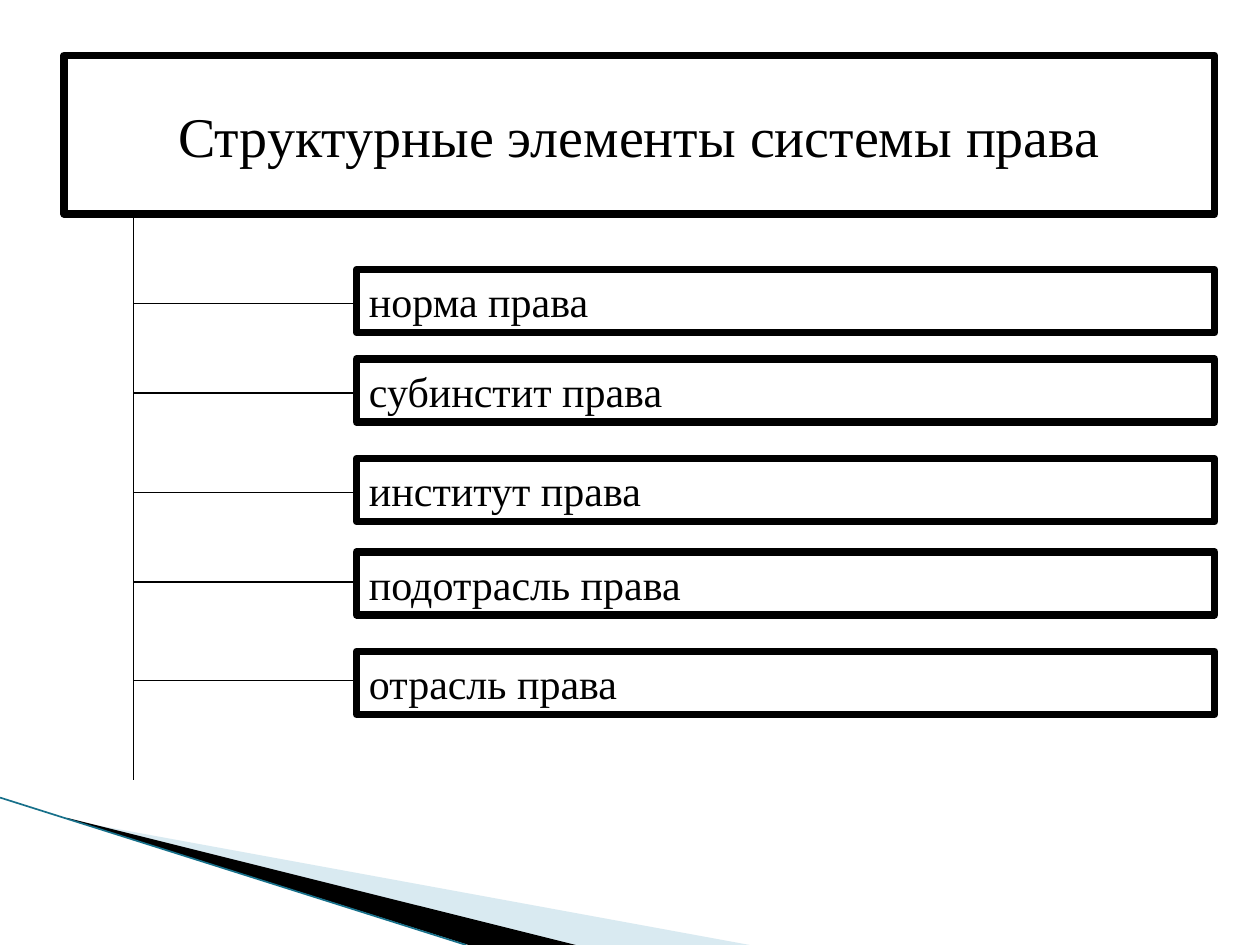
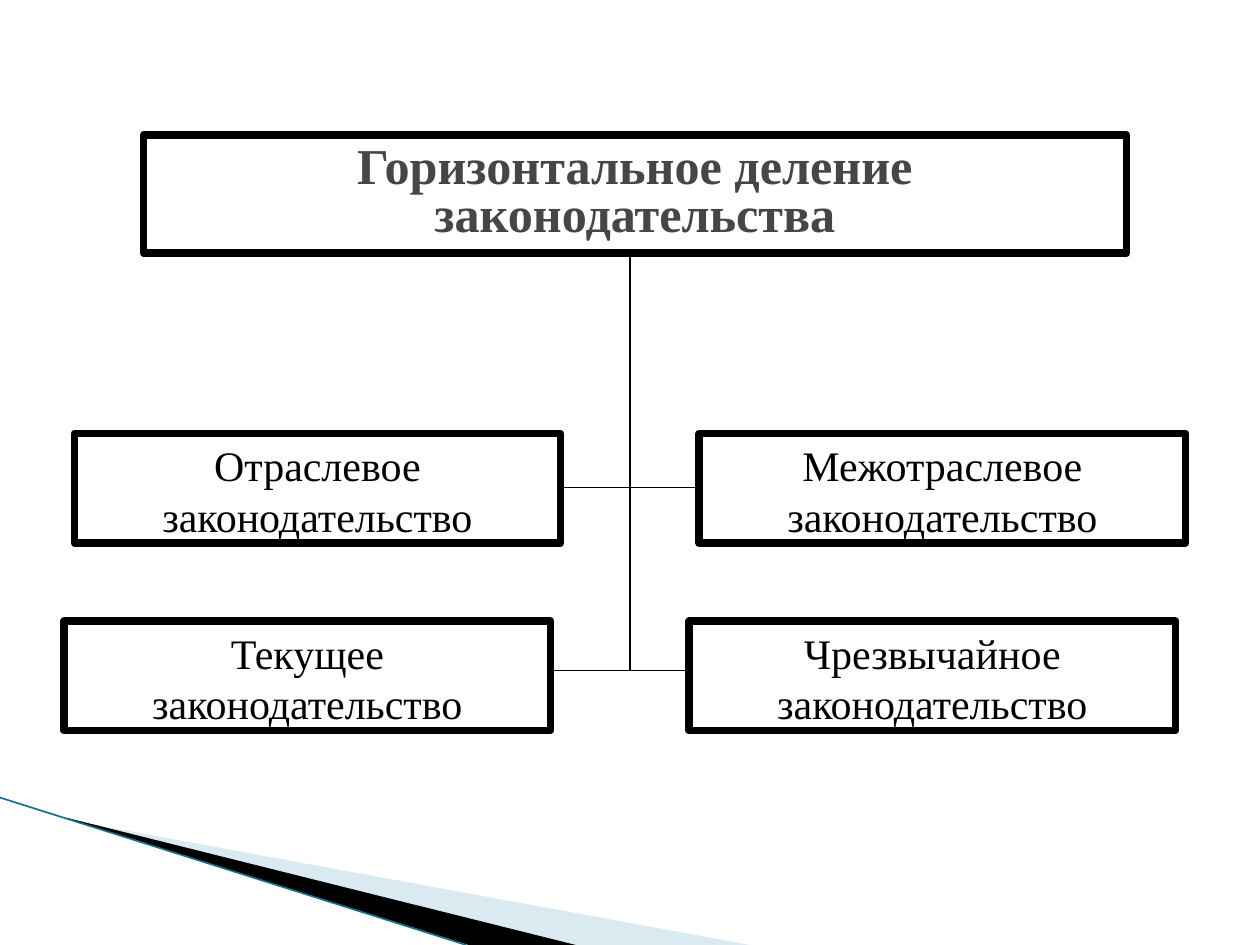
from lxml.etree import SubElement
from pptx import Presentation
from pptx.dml.color import RGBColor
from pptx.enum.shapes import MSO_CONNECTOR, MSO_SHAPE
from pptx.enum.text import MSO_ANCHOR, MSO_AUTO_SIZE, PP_ALIGN
from pptx.oxml.ns import qn
from pptx.util import Inches, Pt

COLORS = {
    "paper": "FFFFFF",
    "ink": "000000",
    "heading": "464646",
    "pale": "A0CBDC",
    "teal": "17708A",
}
FONT = "Times New Roman"
BORDER = 4.33
HAIRLINE = 0.75


def rgb(name):
    """Return the palette colour of that name."""
    return RGBColor.from_string(COLORS[name])


def add_line(slide, start, end, color="ink", width=HAIRLINE):
    """Draw a straight line between two points given in inches."""
    line = slide.shapes.add_connector(
        MSO_CONNECTOR.STRAIGHT, *(Inches(v) for v in (*start, *end)))
    line.line.color.rgb = rgb(color)
    line.line.width = Pt(width)
    SubElement(line._element.spPr, qn("a:effectLst"))


def add_wedge(slide, points, color, opacity=100):
    """Draw a filled polygon without outline."""
    corners = [(Inches(x), Inches(y)) for x, y in points]
    builder = slide.shapes.build_freeform(*corners[0], scale=1.0)
    builder.add_line_segments(corners[1:], close=True)
    wedge = builder.convert_to_shape()
    wedge.shadow.inherit = False
    wedge.fill.solid()
    wedge.fill.fore_color.rgb = rgb(color)
    wedge.line.fill.background()
    if opacity < 100:
        tint = wedge._element.spPr.find(qn("a:solidFill"))[0]
        SubElement(tint, qn("a:alpha"), val=str(opacity * 1000))


def add_corner(slide):
    """Draw the wedges and the line in the lower left corner."""
    add_wedge(slide, [(0.55, 6.51), (5.95, 7.5), (4.56, 7.5), (0.55, 6.5)], "pale", 40)
    add_wedge(slide, [(0.53, 6.49), (4.57, 7.5), (3.72, 7.5), (0.54, 6.5)], "ink")
    add_line(slide, (0, 6.33), (3.7, 7.5), "teal", 0.95)


def add_box(slide, box, text, size=24, align=PP_ALIGN.CENTER, anchor=MSO_ANCHOR.TOP,
            color="ink", bold=False, spacing=None, grow=False):
    """Draw a thick framed box holding one paragraph."""
    frame = slide.shapes.add_shape(MSO_SHAPE.RECTANGLE, *(Inches(v) for v in box))
    frame.shadow.inherit = False
    frame.fill.solid()
    frame.fill.fore_color.rgb = rgb("paper")
    frame.line.color.rgb = rgb("ink")
    frame.line.width = Pt(BORDER)
    SubElement(frame.line._get_or_add_ln(), qn("a:round"))
    body = frame.text_frame
    body.word_wrap = True
    body.vertical_anchor = anchor
    if grow:
        body.auto_size = MSO_AUTO_SIZE.SHAPE_TO_FIT_TEXT
    paragraph = body.paragraphs[0]
    paragraph.alignment = align
    if spacing:
        paragraph.line_spacing = spacing
    run = paragraph.add_run()
    run.text = text
    run.font.name = FONT
    run.font.size = Pt(size)
    run.font.bold = bold
    run.font.color.rgb = rgb(color)


def add_elements_list(slide, box):
    """Draw a heading with its elements hung on a vertical trunk."""
    left, top, width, height = box
    heading_height, indent, trunk_offset = 1.26, 2.32, 0.55
    trunk = left + trunk_offset
    elements = [
        (1.70, 1.97, "норма права"),
        (2.41, 2.68, "субинстит права"),
        (3.20, 3.47, "институт права"),
        (3.94, 4.18, "подотрасль права"),
        (4.73, 4.96, "отрасль права"),
    ]
    add_box(slide, (left, top, width, heading_height),
            "Структурные элементы системы права", 32, anchor=MSO_ANCHOR.MIDDLE)
    for offset, _, name in elements:
        add_box(slide, (left + indent, top + offset, width - indent, 0.5), name,
                align=PP_ALIGN.LEFT, grow=True)
    add_line(slide, (trunk, top + heading_height), (trunk, top + height))
    for _, branch, _ in elements:
        add_line(slide, (trunk, top + branch), (left + indent, top + branch))


def add_division_tree(slide, box):
    """Draw a heading with two rows of paired branches below it."""
    left, top, width, height = box
    branch_width, branch_height, gap = 3.86, 0.87, 1.1
    trunk = left + 4.49
    rows = [
        (0.08, 2.37, 2.80, "Отраслевое", "Межотраслевое"),
        (0, 3.86, 4.25, "Текущее", "Чрезвычайное"),
    ]
    add_box(slide, (left + 0.63, top, 7.8, 0.94), "Горизонтальное деление законодательства",
            28.7, anchor=MSO_ANCHOR.MIDDLE, color="heading", bold=True, spacing=0.8)
    add_line(slide, (trunk, top + 0.95), (trunk, top + rows[-1][2]))
    for shift, offset, joint, *kinds in rows:
        start = left + shift
        for column, kind in enumerate(kinds):
            x = start + column * (branch_width + gap)
            add_box(slide, (x, top + offset, branch_width, branch_height),
                    f"{kind} законодательство")
        inner = start + branch_width
        add_line(slide, (inner, top + joint), (inner + gap, top + joint))


def main():
    """Build both slides and save them."""
    deck = Presentation()
    deck.slide_width, deck.slide_height = Inches(10), Inches(7.5)
    for add_content, box in (
        (add_elements_list, (0.51, 0.44, 9.13, 5.75)),
        (add_division_tree, (0.51, 1.07, 8.9, 4.73)),
    ):
        slide = deck.slides.add_slide(deck.slide_layouts[6])
        slide.background.fill.solid()
        slide.background.fill.fore_color.rgb = rgb("paper")
        add_corner(slide)
        add_content(slide, box)
    deck.save("out.pptx")


if __name__ == "__main__":
    main()
